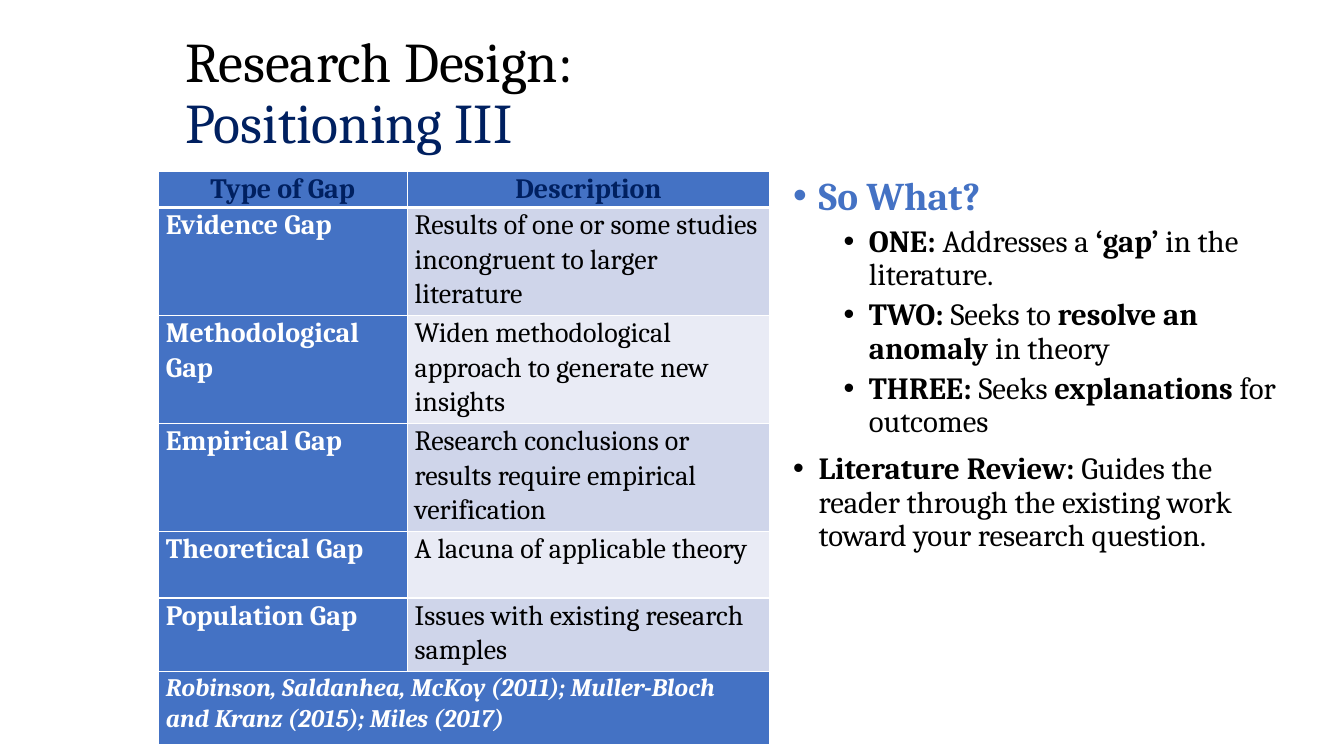
from lxml import etree
from pptx import Presentation
from pptx.dml.color import RGBColor
from pptx.enum.text import MSO_ANCHOR, PP_ALIGN
from pptx.oxml.ns import qn
from pptx.util import Cm, Pt

BLACK = RGBColor(0x00, 0x00, 0x00)
WHITE = RGBColor(0xFF, 0xFF, 0xFF)
NAVY = RGBColor(0x00, 0x20, 0x60)
BLUE = RGBColor(0x44, 0x72, 0xC4)
BAND_DARK = RGBColor(0xCF, 0xD5, 0xEA)
BAND_LIGHT = RGBColor(0xE9, 0xEB, 0xF5)
CENTER, LEFT = PP_ALIGN.CENTER, PP_ALIGN.LEFT
MIDDLE = MSO_ANCHOR.MIDDLE
FONT = "Cambria"

TITLE = [("Research Design: ", BLACK), ("Positioning III", NAVY)]
HEADINGS = ("Type of Gap", "Description")
GAPS = [
    ("Evidence Gap", "Results of one or some studies incongruent to larger literature"),
    ("Methodological Gap", "Widen methodological approach to generate new insights"),
    ("Empirical Gap", "Research conclusions or results require empirical verification"),
    ("Theoretical Gap", "A lacuna of applicable theory"),
    ("Population Gap", "Issues with existing research samples"),
]
SOURCES = "Robinson, Saldanhea, McKoy (2011); Muller-Bloch and Kranz (2015); Miles (2017)"
COLUMN_WIDTHS = (6.27, 9.14)
ROW_HEIGHTS = (0.91, 2.57, 2.57, 2.57, 1.68, 1.85, 1.85)

# Each point: level, size, colour, spans of (text, bold)
POINTS = [
    (0, 28, BLUE, [("So What?", True)]),
    (1, 22, BLACK, [("ONE: ", True), ("Addresses a ", False),
                    ("‘gap’ ", True), ("in the literature.", False)]),
    (1, 22, BLACK, [("TWO: ", True), ("Seeks to ", False),
                    ("resolve an anomaly ", True), ("in theory", False)]),
    (1, 22, BLACK, [("THREE: ", True), ("Seeks ", False),
                    ("explanations", True), (" for outcomes", False)]),
    (0, 22, BLACK, [("Literature Review:", True),
                    (" Guides the reader through the existing work toward "
                     "your research question.", False)]),
]


def write(frame, spans, size, color, align=LEFT, line=0.9, before=0,
          italic=False, level=None):
    """Add a paragraph of (text, bold) spans; a level makes it a bullet."""
    para = frame.paragraphs[0]
    if para.runs:
        para = frame.add_paragraph()
    para.alignment = align
    para.line_spacing = line
    para.space_before = Pt(before)
    if level is not None:
        para.level = level
        properties = para._p.get_or_add_pPr()
        properties.set("marL", str(Cm(0.64 + 1.27 * level)))
        properties.set("indent", str(-Cm(0.64)))
        etree.SubElement(properties, qn("a:buFont"), typeface="Arial")
        etree.SubElement(properties, qn("a:buChar"), char="•")
    for text, bold in spans:
        span = para.add_run()
        span.text = text
        span.font.name = FONT
        span.font.size = Pt(size)
        span.font.bold = bold
        span.font.italic = italic
        span.font.color.rgb = color


def add_box(page, left, top, width, height):
    box = page.shapes.add_textbox(Cm(left), Cm(top), Cm(width), Cm(height))
    box.text_frame.word_wrap = True
    return box.text_frame


def border_cell(cell, **widths):
    """Draw white borders, given in points by side: L, R, T, B."""
    properties = cell._tc.get_or_add_tcPr()
    for position, (side, width) in enumerate(widths.items()):
        edge = etree.Element(qn(f"a:ln{side}"), w=str(Pt(width)))
        fill = etree.SubElement(edge, qn("a:solidFill"))
        etree.SubElement(fill, qn("a:srgbClr"), val=str(WHITE))
        properties.insert(position, edge)


def fill_cell(cell, text, fill, color, size=20, bold=True, bottom=1, top=1, **style):
    cell.margin_left = cell.margin_right = Cm(0.19)
    cell.margin_top = cell.margin_bottom = 0
    cell.fill.solid()
    cell.fill.fore_color.rgb = fill
    border_cell(cell, L=1, R=1, T=top, B=bottom)
    write(cell.text_frame, [(text, bold)], size, color, line=1.07, **style)


def add_gap_table(page):
    table = page.shapes.add_table(
        len(ROW_HEIGHTS), len(COLUMN_WIDTHS), Cm(3.99), Cm(4.32),
        Cm(sum(COLUMN_WIDTHS)), Cm(sum(ROW_HEIGHTS))).table
    for column, width in zip(table.columns, COLUMN_WIDTHS):
        column.width = Cm(width)
    for row, height in zip(table.rows, ROW_HEIGHTS):
        row.height = Cm(height)

    for column, heading in enumerate(HEADINGS):
        fill_cell(table.cell(0, column), heading, BLUE, NAVY, align=CENTER, bottom=3)
    for row, (gap, description) in enumerate(GAPS, start=1):
        top = 3 if row == 1 else 1
        band = BAND_DARK if row % 2 else BAND_LIGHT
        fill_cell(table.cell(row, 0), gap, BLUE, WHITE, top=top)
        fill_cell(table.cell(row, 1), description, band, BLACK, bold=False, top=top)
    last = len(ROW_HEIGHTS) - 1
    table.cell(last, 0).merge(table.cell(last, 1))
    fill_cell(table.cell(last, 0), SOURCES, BLUE, WHITE, size=18, italic=True)


def main():
    deck = Presentation()
    deck.slide_width, deck.slide_height = Cm(33.87), Cm(19.05)
    page = deck.slides.add_slide(deck.slide_layouts[6])

    points = add_box(page, 19.74, 4.32, 13.28, 14.2)
    for level, size, color, spans in POINTS:
        write(points, spans, size, color, before=5 if level else 10, level=level)

    title = add_box(page, 4.42, 0.53, 25.12, 3.73)
    title.vertical_anchor = MIDDLE
    for text, color in TITLE:
        write(title, [(text, False)], 40, color)

    add_gap_table(page)
    deck.save("out.pptx")


if __name__ == "__main__":
    main()
